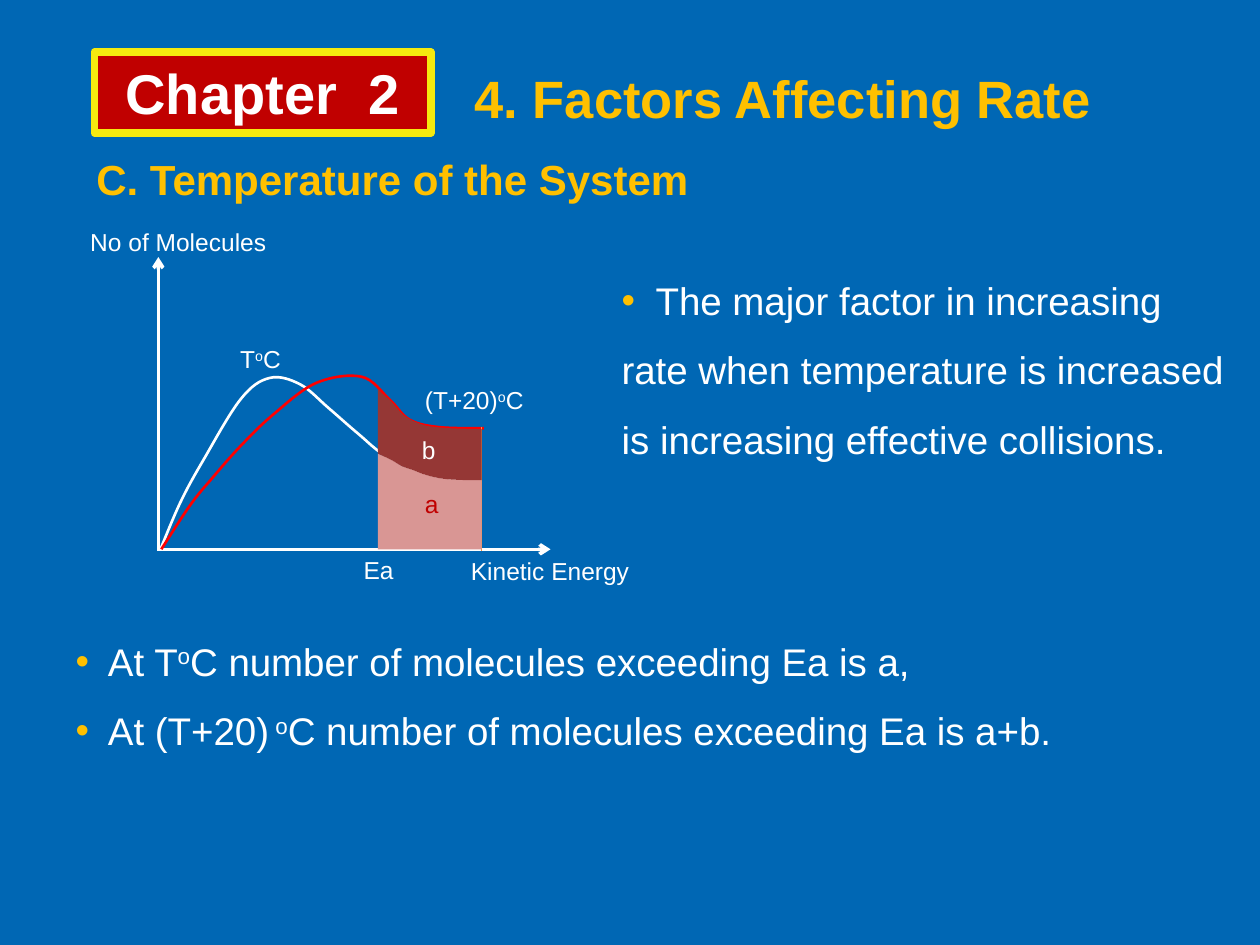
from pptx import Presentation
from pptx.dml.color import RGBColor as RGB
from pptx.enum.shapes import MSO_CONNECTOR as LINE, MSO_SHAPE as SHAPE
from pptx.enum.text import MSO_ANCHOR as ANCHOR, MSO_AUTO_SIZE as FIT, PP_ALIGN as ALIGN
from pptx.oxml.ns import qn
from pptx.util import Pt
from lxml.etree import SubElement as add_node

BLUE = RGB(0x00, 0x67, 0xB4)
WHITE = RGB(0xFF, 0xFF, 0xFF)
GOLD = RGB(0xFF, 0xC0, 0x00)
YELLOW = RGB(0xF5, 0xEA, 0x0F)
CRIMSON = RGB(0xC0, 0x00, 0x00)
RED = RGB(0xFF, 0x00, 0x00)
ORANGE = RGB(0xF6, 0x92, 0x40)
PINK = RGB(0xD9, 0x96, 0x94)
MAROON = RGB(0x95, 0x37, 0x35)

BASE = 313.9
LEFT = 90.5
COOL = [(91.4, 314.6), (103, 287.3), (115.9, 263.5), (137.5, 228.2), (154.1, 216),
        (171.4, 219.6), (187.9, 233.3), (204.5, 247.7), (221.8, 261.4), (249.1, 272.9),
        (275, 274.3)]
WARM = [(92.2, 313.9), (108.7, 288.7), (121, 273.6), (137.5, 254.9), (156.2, 236.9),
        (180.7, 218.9), (206.6, 215.3), (222.5, 228.2), (234, 239.8), (250.6, 244.1),
        (276.5, 244.8)]
LOWER = [(216, 259.2), (224, 263), (229.7, 266.4), (236, 268.6), (243.4, 271.4),
         (253.4, 273.6), (265, 274.3), (275.2, 274.3)]
UPPER = [(216, 222), (217.4, 223.9), (223.9, 229.7), (231.1, 237.6), (241.2, 242.6),
         (249.8, 244.1), (259.2, 244.8), (275.2, 245.2)]
LABELS = [
    ("Ea", 200.7, 313.6, 35, WHITE),
    ("No of Molecules", 44.5, 126, 127, WHITE),
    ("T^o^C", 130.2, 193, 41, WHITE),
    ("(T+20)^o^C", 235.7, 216.7, 79, WHITE),
    ("Kinetic Energy", 262, 314, 116, WHITE),
    ("b", 234, 244.8, 24, WHITE),
    ("a", 235.7, 275.8, 22, CRIMSON),
]


def write(para, text, size, color, bold=False):
    """Fill a paragraph, raising the parts between carets."""
    for i, part in enumerate(text.split("^")):
        run = para.add_run()
        run.text = part
        font = run.font
        font.name, font.size, font.bold = "Arial", Pt(size), bold
        font.color.rgb = color
        if i % 2:
            font._element.set("baseline", "30000")


def place(shape, left, top, width, height):
    """Move and size a shape."""
    shape.left, shape.top = Pt(left), Pt(top)
    shape.width, shape.height = Pt(width), Pt(height)


def add_head(shape, text, box, size):
    """Set a gold heading in a title or text box."""
    place(shape, *box)
    frame = shape.text_frame
    frame.word_wrap, frame.auto_size = True, FIT.NONE
    frame.vertical_anchor = ANCHOR.TOP
    para = frame.paragraphs[0]
    para.alignment = ALIGN.LEFT
    write(para, text, size, GOLD, True)


def add_list(shape, items, box, hang=0):
    """Set a list with gold bullets in a body placeholder."""
    place(shape, *box)
    frame = shape.text_frame
    frame.auto_size = FIT.NONE
    for i, item in enumerate(items):
        para = frame.add_paragraph() if i else frame.paragraphs[0]
        para.line_spacing, para.space_before = 1.5, Pt(0)
        props = para._p.get_or_add_pPr()
        props.set("marL", str(Pt(hang)))
        props.set("indent", str(-Pt(hang)))
        tint = add_node(add_node(props, qn("a:buClr")), qn("a:srgbClr"))
        tint.set("val", str(GOLD))
        add_node(props, qn("a:buFont")).set("typeface", "Arial")
        add_node(props, qn("a:buChar")).set("char", "•")
        write(para, item, 22, WHITE)


def add_badge(shapes, text):
    """Draw the framed chapter badge."""
    badge = shapes.add_shape(SHAPE.RECTANGLE, Pt(54), Pt(29.8), Pt(192.2), Pt(46.2))
    badge.shadow.inherit = False
    badge.fill.solid()
    badge.fill.fore_color.rgb = CRIMSON
    badge.line.color.rgb, badge.line.width = YELLOW, Pt(4.5)
    badge.text_frame.vertical_anchor = ANCHOR.MIDDLE
    para = badge.text_frame.paragraphs[0]
    para.alignment = ALIGN.CENTER
    write(para, text, 32, WHITE, True)


def add_label(shapes, text, left, top, width, color):
    """Add a small graph label."""
    frame = shapes.add_textbox(Pt(left), Pt(top), Pt(width), Pt(28)).text_frame
    frame.word_wrap = False
    write(frame.paragraphs[0], text, 14, color)


def add_line(shapes, start, end, color, width, arrow=False):
    """Draw a straight line, with an optional arrowhead at its start."""
    line = shapes.add_connector(LINE.STRAIGHT, *(Pt(v) for v in start + end))
    line.line.color.rgb, line.line.width = color, Pt(width)
    if arrow:
        add_node(line.line._get_or_add_ln(), qn("a:headEnd")).set("type", "arrow")
    add_node(line._element.spPr, qn("a:effectLst"))


def bend(knots):
    """Return the two control points of each smooth segment."""
    pad = [knots[0], *knots, knots[-1]]
    return [((b[0] + (c[0] - a[0]) / 6, b[1] + (c[1] - a[1]) / 6),
             (c[0] - (d[0] - b[0]) / 6, c[1] - (d[1] - b[1]) / 6))
            for a, b, c, d in zip(pad, pad[1:], pad[2:], pad[3:])]


def add_path(shapes, *runs, close=False):
    """Build a freeform of smooth runs joined by straight lines."""
    spots = [(Pt(x), Pt(y)) for run in runs for x, y in run]
    pen = shapes.build_freeform(*spots[0])
    pen.add_line_segments(spots[1:], close=close)
    shape = pen.convert_to_shape()
    shape.shadow.inherit = False
    pairs = []
    for run in runs:
        pairs += bend(run) + [None] if len(run) > 2 else [None] * len(run)
    for node, pair in zip(list(shape._element.iter(qn("a:lnTo"))), pairs):
        if pair:
            node.tag = qn("a:cubicBezTo")
            for i, (x, y) in enumerate(pair):
                spot = add_node(node, qn("a:pt"))
                spot.set("x", str(Pt(x) - shape.left))
                spot.set("y", str(Pt(y) - shape.top))
                node.insert(i, spot)
    return shape


def add_curve(shapes, knots, color):
    """Draw an open curve."""
    curve = add_path(shapes, knots)
    curve.fill.background()
    curve.line.color.rgb, curve.line.width = color, Pt(1.5)


def add_area(shapes, top, bottom, color):
    """Draw a filled area with no outline."""
    area = add_path(shapes, top, bottom, close=True)
    area.fill.solid()
    area.fill.fore_color.rgb = color
    area.line.fill.background()


def add_graph(shapes):
    """Draw the axes, curves, areas and labels."""
    add_line(shapes, (LEFT, 146.9), (LEFT, BASE), WHITE, 2, True)
    add_line(shapes, (314.6, BASE), (LEFT - 0.5, BASE), WHITE, 2, True)
    add_curve(shapes, COOL, WHITE)
    add_curve(shapes, WARM, RED)
    add_line(shapes, (275, 244), (275, 315), ORANGE, 0.75)
    add_area(shapes, LOWER, [(275.2, BASE), (216, BASE)], PINK)
    add_area(shapes, UPPER, LOWER[::-1], MAROON)
    for label in LABELS:
        add_label(shapes, *label)


def main():
    """Build and save the slide."""
    deck = Presentation()
    deck.slide_width, deck.slide_height = Pt(720), Pt(540)
    slide = deck.slides.add_slide(deck.slide_layouts[3])
    slide.background.fill.solid()
    slide.background.fill.fore_color.rgb = BLUE
    shapes = slide.shapes
    title, notes, cause = slide.placeholders
    add_badge(shapes, "Chapter  2")
    add_head(title, "4. Factors Affecting Rate", (264, 34.2, 420, 44), 30)
    sub = shapes.add_textbox(0, 0, 0, 0)
    add_head(sub, "C. Temperature of the System", (48, 84, 420, 36), 24)
    add_list(notes, ["At T^o^C number of molecules exceeding Ea is a,",
                     "At (T+20)^ o^C number of molecules exceeding Ea is a+b."],
             (36, 347.8, 606, 87), 18.5)
    add_list(cause, ["  The major factor in increasing rate when temperature is "
                     "increased is increasing effective collisions."],
             (348, 141.6, 360, 122))
    add_graph(shapes)
    deck.save("out.pptx")


if __name__ == "__main__":
    main()
